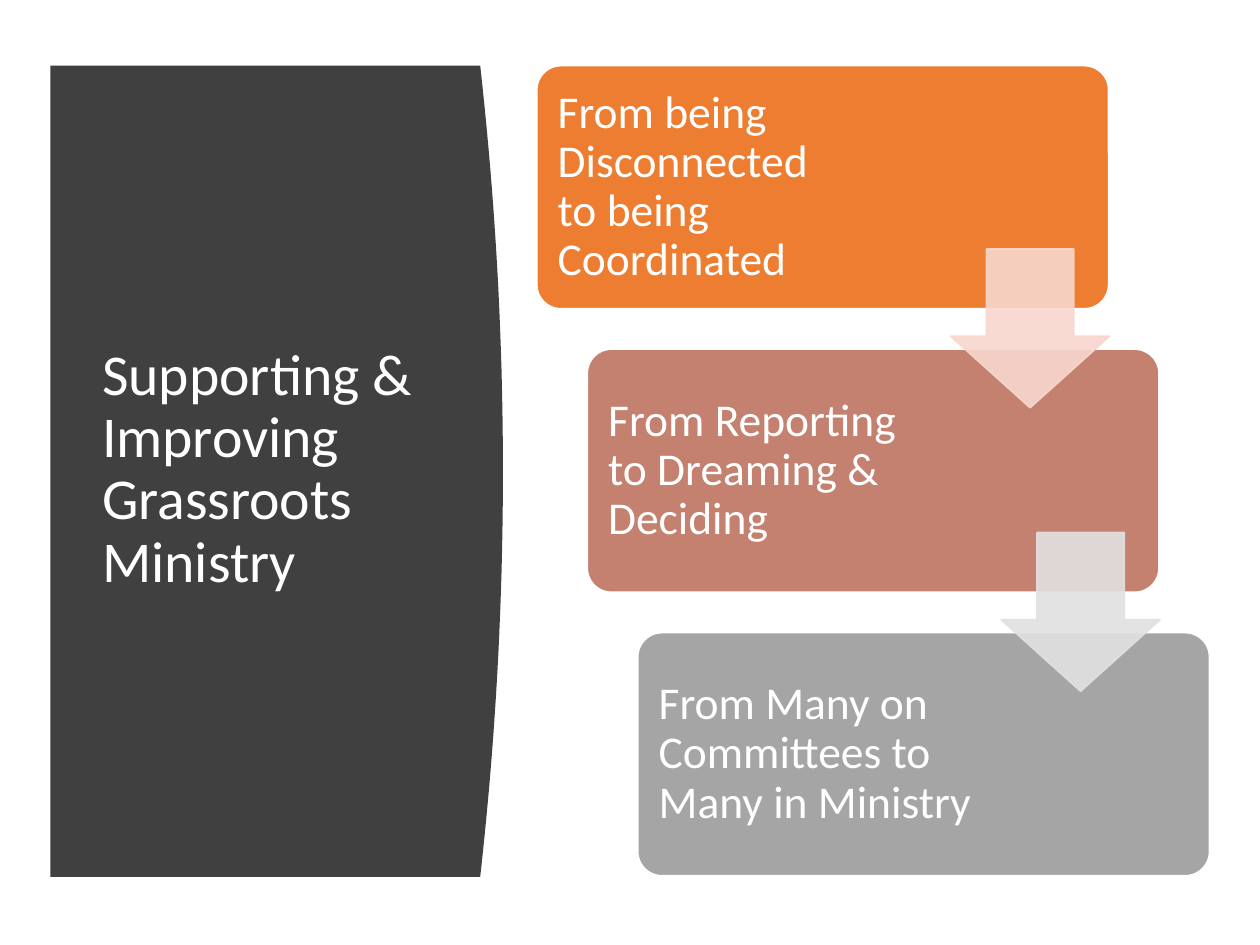
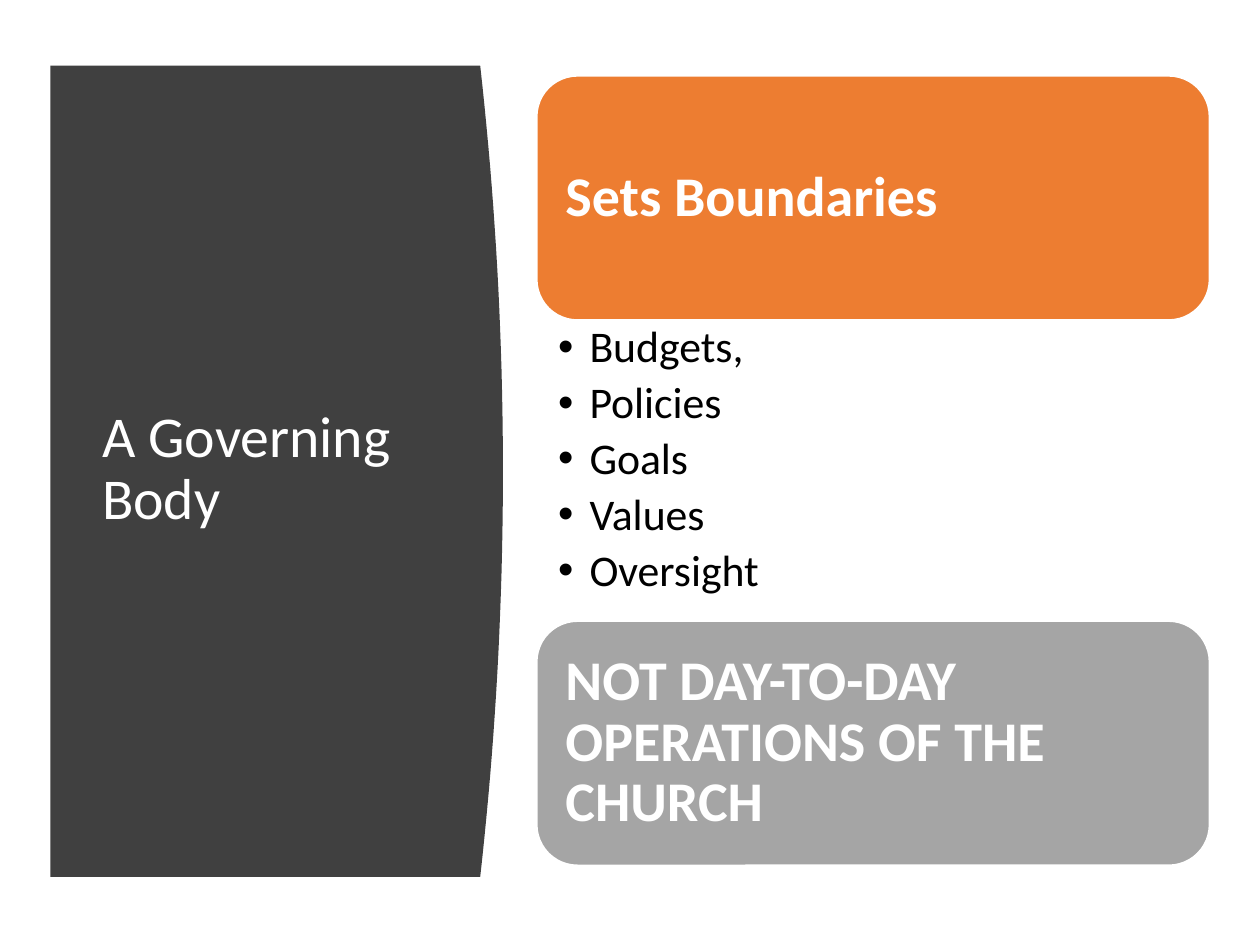
from dataclasses import dataclass

from lxml.etree import SubElement
from pptx import Presentation
from pptx.dml.color import RGBColor
from pptx.enum.shapes import MSO_SHAPE
from pptx.enum.text import MSO_ANCHOR, MSO_AUTO_SIZE, PP_ALIGN
from pptx.oxml.ns import qn
from pptx.util import Pt


@dataclass(frozen=True)
class Theme:
    """Colours, font and type sizes shared by the slides."""

    font: str = "Calibri"
    white: str = "FFFFFF"
    black: str = "000000"
    charcoal: str = "404040"
    orange: str = "ED7D31"
    clay: str = "C48170"
    gray: str = "A5A5A5"
    pale_orange: str = "F8D7CE"
    pale_gray: str = "E1E1E1"
    title_size: float = 33
    step_size: float = 26
    heading_size: float = 32
    bullet_size: float = 25


@dataclass(frozen=True)
class Box:
    """A rectangle in points."""

    left: float
    top: float
    width: float
    height: float

    def lengths(self):
        """Return left, top, width and height as lengths."""
        return [Pt(value) for value in (self.left, self.top, self.width, self.height)]


THEME = Theme()
PANEL = Box(28.8, 37.5, 258.6, 463.6)
STEPS = Box(306.7, 37.5, 384.5, 463)
GOVERNANCE = Box(306.7, 43.3, 384.5, 451.2)


def paint(shape, fill, line=None):
    """Give a shape a solid fill, an optional outline and no shadow."""
    shape.shadow.inherit = False
    shape.fill.solid()
    shape.fill.fore_color.rgb = RGBColor.from_string(fill)
    if line:
        shape.line.color.rgb = RGBColor.from_string(line)
        shape.line.width = Pt(1)
    else:
        shape.line.fill.background()


def write(shape, lines, size, color, anchor, margins=None, bold=False):
    """Fill a shape with left-aligned paragraphs in the theme font."""
    frame = shape.text_frame
    frame.text = "\n".join(lines)
    frame.word_wrap = True
    frame.auto_size = MSO_AUTO_SIZE.NONE
    frame.vertical_anchor = anchor
    if margins:
        (frame.margin_left, frame.margin_top,
         frame.margin_right, frame.margin_bottom) = [Pt(margin) for margin in margins]
    for paragraph in frame.paragraphs:
        paragraph.alignment = PP_ALIGN.LEFT
        paragraph.line_spacing = 0.9
        for run in paragraph.runs:
            run.font.name = THEME.font
            run.font.size = Pt(size)
            run.font.bold = bold
            run.font.color.rgb = RGBColor.from_string(color)


def add_title_panel(slide, box, title):
    """Draw the dark panel with its bowed right side and set the title on it."""
    bulge, segments = 13, 40
    edge = box.left + box.width - bulge
    curve = []
    for index in range(segments + 1):
        share = index / segments
        bow = 4 * bulge * share * (1 - share)
        curve.append((Pt(edge + bow), Pt(box.top + box.height * share)))
    builder = slide.shapes.build_freeform(Pt(box.left), Pt(box.top))
    builder.add_line_segments(curve + [(Pt(box.left), Pt(box.top + box.height))], close=True)
    panel = builder.convert_to_shape()
    paint(panel, THEME.charcoal)

    heading = slide.shapes.title
    heading.element.addprevious(panel.element)
    text_box = Box(box.left + 22.3, box.top + 42.4, 201.6, 377.3)
    heading.left, heading.top, heading.width, heading.height = text_box.lengths()
    write(heading, [title], THEME.title_size, THEME.white, MSO_ANCHOR.MIDDLE)


def add_card(slide, box, text, fill, size, margins, corner, bold=False):
    """Draw a rounded card with white text."""
    card = slide.shapes.add_shape(MSO_SHAPE.ROUNDED_RECTANGLE, *box.lengths())
    card.adjustments[0] = corner
    paint(card, fill, THEME.white)
    write(card, [text], size, THEME.white, MSO_ANCHOR.MIDDLE, margins, bold)


def add_down_arrow(slide, box, color):
    """Draw a slightly transparent arrow pointing down."""
    arrow = slide.shapes.add_shape(MSO_SHAPE.DOWN_ARROW, *box.lengths())
    arrow.adjustments[0], arrow.adjustments[1] = 0.55, 0.45
    paint(arrow, color, color)
    for color_element in arrow.element.spPr.iter(qn("a:srgbClr")):
        SubElement(color_element, qn("a:alpha"), val="90000")


def add_staircase(slide, box, steps, arrow_colors):
    """Lay out cards stepping down to the right, joined by arrows."""
    card_width, card_height, arrow_size = 326.8, 139, 90.7
    shift = (box.width - card_width) / (len(steps) - 1)
    drop = (box.height - card_height) / (len(steps) - 1)
    corners = [(box.left + shift * index, box.top + drop * index) for index in range(len(steps))]
    for (left, top), (text, fill, right_margin) in zip(corners, steps):
        add_card(slide, Box(left, top, card_width, card_height), text, fill,
                 THEME.step_size, (7.9, 7.9, right_margin, 7.9), 0.1)
    for (left, top), color in zip(corners, arrow_colors):
        add_down_arrow(slide, Box(left + 236.6, top + 104.8, arrow_size, arrow_size), color)


def add_bullets(slide, box, items):
    """Write a bulleted list."""
    bullets = slide.shapes.add_textbox(*box.lengths())
    write(bullets, items, THEME.bullet_size, THEME.black, MSO_ANCHOR.TOP, (12.2, 2.9, 18, 2.9))
    for paragraph in bullets.text_frame.paragraphs:
        paragraph.space_after = Pt(5)
        properties = paragraph.runs[0].font and paragraph._p.get_or_add_pPr()
        properties.set("marL", str(Pt(18)))
        properties.set("indent", str(-Pt(18)))
        SubElement(properties, qn("a:buFont"), typeface="Arial")
        SubElement(properties, qn("a:buChar"), char="•")


def add_governance(slide, box, heading, items, closing):
    """Stack a heading card, its bullets and a closing card."""
    card_height = 139.6
    closing_top = box.top + box.height - card_height
    list_top = box.top + card_height
    for text, fill, top in ((heading, THEME.orange, box.top), (closing, THEME.gray, closing_top)):
        add_card(slide, Box(box.left, top, box.width, card_height), text, fill,
                 THEME.heading_size, (9.6,) * 4, 0.167, bold=True)
    add_bullets(slide, Box(box.left, list_top, box.width, closing_top - list_top), items)


def add_slide(presentation, title):
    """Add a title-only slide with the shared title panel."""
    slide = presentation.slides.add_slide(presentation.slide_layouts[5])
    add_title_panel(slide, PANEL, title)
    return slide


def main():
    """Build both slides and save them."""
    presentation = Presentation()
    presentation.slide_width, presentation.slide_height = Pt(720), Pt(540)

    slide = add_slide(presentation, "Supporting & Improving Grassroots Ministry")
    add_staircase(slide, STEPS, [
        ("From being Disconnected to being Coordinated", THEME.orange, 149),
        ("From Reporting to Dreaming & Deciding", THEME.clay, 127),
        ("From Many on Committees to Many in Ministry", THEME.gray, 127),
    ], [THEME.pale_orange, THEME.pale_gray])

    slide = add_slide(presentation, "A Governing Body")
    add_governance(slide, GOVERNANCE, "Sets Boundaries",
                   ["Budgets,", "Policies", "Goals", "Values", "Oversight"],
                   "NOT DAY-TO-DAY OPERATIONS OF THE CHURCH")

    presentation.save("out.pptx")


if __name__ == "__main__":
    main()
